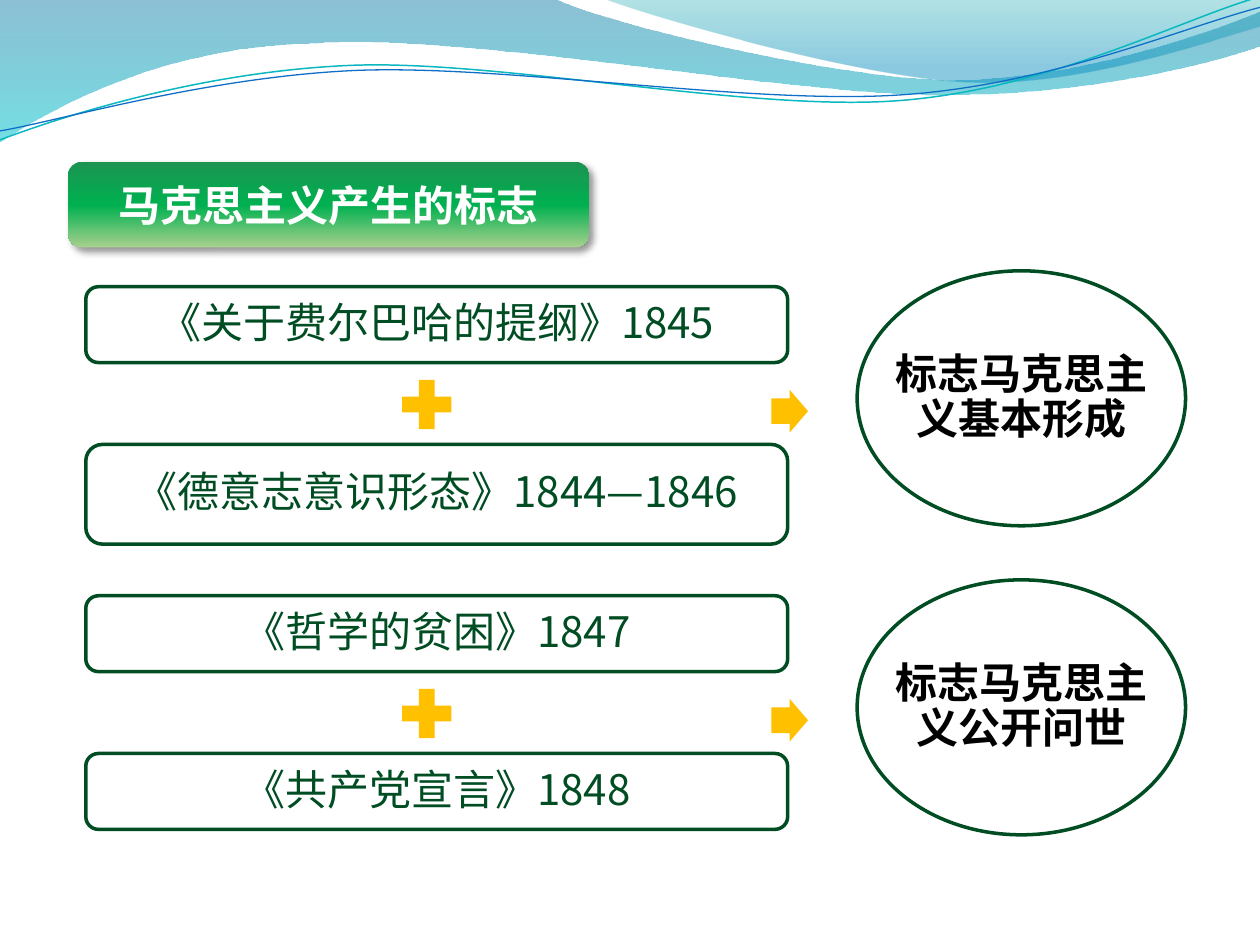
"""Build the slide on the works that mark the birth of Marxism."""
from lxml import etree
from pptx import Presentation
from pptx import util as u
from pptx.dml.color import RGBColor
from pptx.enum import shapes, text
from pptx.oxml.ns import qn

FONT = "Noto Sans CJK SC"
GREEN = RGBColor(0x01, 0x4D, 0x23)
GOLD = RGBColor(0xFF, 0xC0, 0x00)
WHITE = RGBColor(0xFF, 0xFF, 0xFF)
BLACK = RGBColor(0x00, 0x00, 0x00)
TEAL_LINE = RGBColor(0x0A, 0xB8, 0xBF)
BLUE_LINE = RGBColor(0x0F, 0x6F, 0xC6)
DEEP_BLUE = RGBColor(0x00, 0x74, 0xA1)
AQUA = RGBColor(0x00, 0xC6, 0xCF)
TEAL = RGBColor(0x00, 0xA1, 0xA9)
SKY = RGBColor(0x00, 0x8B, 0xBF)
PANEL_TOP = RGBColor(0x1B, 0x94, 0x51)
PANEL_MID = RGBColor(0x00, 0xB0, 0x50)
PANEL_END = RGBColor(0xA9, 0xD1, 0x8E)

WAVES = [
    ([[(0, 0)], [(11.18, -0.03)],
      [(12.09, 0.43), (16.87, 1.6), (19.25, 1.6)],
      [(21.67, 1.6), (24.33, 0.66), (25.4, 0.23)], [(25.43, 0.91)],
      [(24.97, 1.12), (22.1, 1.93), (18.95, 1.91)],
      [(15.8, 1.91), (9.7, 0.71), (6.53, 0.86)],
      [(3.28, 0.91), (1.17, 2.11), (-0.03, 2.87)], [(0, 0)]],
     [(0, DEEP_BLUE, 45), (100, AQUA, 55)]),
    ([[(12.17, -0.03)],
      [(12.93, 0.28), (17.32, 1.57), (19.53, 1.65)],
      [(21.74, 1.75), (24.41, 0.81), (25.4, 0.53)], [(25.4, 0)], [(12.17, -0.03)]],
     [(0, TEAL, 30), (80, SKY, 45)]),
]
STRANDS = [
    ([[(0, 2.82)], [(1.22, 2.36), (4.01, 1.45), (7.04, 1.32)],
      [(10.03, 1.19), (15.06, 2.26), (18.11, 2.03)],
      [(21.16, 1.8), (23.83, 0.38), (25.35, -0.05)]], TEAL_LINE, 0.85),
    ([[(0, 2.64)], [(1.19, 2.44), (4.17, 1.55), (7.19, 1.42)],
      [(10.24, 1.3), (15.16, 2.13), (18.21, 1.91)],
      [(21.23, 1.7), (23.9, 0.53), (25.4, 0.15)]], BLUE_LINE, 0.75),
]
GROUPS = [
    ("《关于费尔巴哈的提纲》1845", "《德意志意识形态》1844—1846", 2.01, "标志马克思主义基本形成"),
    ("《哲学的贫困》1847", "《共产党宣言》1848", 1.53, "标志马克思主义公开问世"),
]
GROUP_TOP, GROUP_STEP = 5.78, 6.23
UNITS = 1000


def style(sp, fill=None, line=None, width=2):
    """Set plain fill and outline and drop the theme shadow."""
    sp.shadow.inherit = False
    if fill is None:
        sp.fill.background()
    else:
        sp.fill.solid()
        sp.fill.fore_color.rgb = fill
    if line is None:
        sp.line.fill.background()
    else:
        sp.line.color.rgb = line
        sp.line.width = u.Pt(width)
    return sp


def add_curve(s, path, closed=True, **look):
    """Add a freeform whose three-point segments are cubic curves."""
    ends = [(x * UNITS, y * UNITS) for x, y in (seg[-1] for seg in path)]
    fb = s.shapes.build_freeform(*ends[0], scale=u.Cm(1) / UNITS)
    fb.add_line_segments(ends[1:], close=closed)
    sp = fb.convert_to_shape()
    left, top = (min(axis) for axis in zip(*ends))
    lines = list(sp._element.iter(qn("a:lnTo")))
    for line, seg in zip(lines, path[1:]):
        if len(seg) == 3:
            line.tag
            cubic = etree.Element(qn("a:cubicBezTo"))
            for x, y in seg:
                etree.SubElement(cubic, qn("a:pt"), x=str(round(x * UNITS - left)),
                                 y=str(round(y * UNITS - top)))
            line.getparent().replace(line, cubic)
    return style(sp, **look)


def ellipse_path(cx, cy, rx, ry):
    """Return an ellipse as four cubic segments from its left end."""
    turns = [(-1, 0), (0, -1), (1, 0), (0, 1), (-1, 0)]
    k = 0.55
    path = [[(cx - rx, cy)]]
    for (ax, ay), (bx, by) in zip(turns, turns[1:]):
        unit = [(ax + k * bx, ay + k * by), (bx + k * ax, by + k * ay), (bx, by)]
        path.append([(cx + rx * x, cy + ry * y) for x, y in unit])
    return path


def add_preset(s, kind, box, **look):
    """Add a preset shape in a box given in centimetres."""
    return style(s.shapes.add_shape(kind, *map(u.Cm, box)), **look)


def set_gradient(sp, stops):
    """Fill a shape with a gradient running from top to bottom."""
    sp.fill.background()
    sp_pr = sp._element.spPr
    grad = etree.Element(qn("a:gradFill"), rotWithShape="1")
    stop_list = etree.SubElement(grad, qn("a:gsLst"))
    for pos, color, alpha in stops:
        gs = etree.SubElement(stop_list, qn("a:gs"), pos=str(pos * 1000))
        clr = etree.SubElement(gs, qn("a:srgbClr"), val=str(color))
        etree.SubElement(clr, qn("a:alpha"), val=str(alpha * 1000))
    etree.SubElement(grad, qn("a:lin"), ang="5400000", scaled="0")
    sp_pr.replace(sp_pr.find(qn("a:noFill")), grad)


def set_shadow(sp):
    """Give a shape a soft shadow to the lower right."""
    effects = sp._element.spPr.find(qn("a:effectLst"))
    shadow = etree.SubElement(effects, qn("a:outerShdw"), blurRad=str(u.Pt(4)),
                              dist=str(u.Pt(3)), dir="2700000", algn="tl", rotWithShape="0")
    clr = etree.SubElement(shadow, qn("a:srgbClr"), val=str(BLACK))
    etree.SubElement(clr, qn("a:alpha"), val="40000")


def write(sp, words, color, bold=False, frame=None, para=None):
    """Write one centred paragraph into a shape."""
    tf = sp.text_frame
    p = tf.paragraphs[0]
    r = p.add_run()
    r.text = words
    formats = [
        (tf, {"word_wrap": True, "vertical_anchor": text.MSO_ANCHOR.MIDDLE, **(frame or {})}),
        (p, {"alignment": text.PP_ALIGN.CENTER, **(para or {})}),
        (r.font, {"size": u.Pt(24), "bold": bold, "name": FONT}),
        (r.font.color, {"rgb": color}),
    ]
    for obj, values in formats:
        for name, value in values.items():
            setattr(obj, name, value)
    etree.SubElement(r._r.get_or_add_rPr(), qn("a:ea"), typeface=FONT)


def add_waves(s):
    """Draw the wavy band along the top."""
    for path, stops in WAVES:
        set_gradient(add_curve(s, path), stops)
    for path, color, width in STRANDS:
        add_curve(s, path, closed=False, line=color, width=width)


def add_heading(s, words):
    """Place the heading in its green panel."""
    panel = add_preset(s, shapes.MSO_SHAPE.ROUNDED_RECTANGLE, (1.37, 3.26, 10.51, 1.73))
    set_gradient(panel, [(0, PANEL_TOP, 100), (51, PANEL_MID, 100), (100, PANEL_END, 100)])
    set_shadow(panel)
    write(panel, words, WHITE, bold=True)


def add_group(s, top, first, second, second_height, result):
    """Draw two works joined by a plus and the result they lead to."""
    ms = shapes.MSO_SHAPE
    para = {"line_spacing": 0.9, "space_after": u.Pt(8)}
    add_preset(s, ms.MATH_PLUS, (7.93, top + 1.7, 1.35, 1.35), fill=GOLD)
    arrow = add_preset(s, ms.RIGHT_ARROW, (15.55, top + 2.08, 0.74, 0.86), fill=GOLD)
    arrow.adjustments[0] = 0.6
    ring = add_curve(s, ellipse_path(20.59, top + 2.25, 3.31, 2.57), line=GREEN)
    margins = {f"margin_{side}": u.Cm(0.69) for side in ("left", "top", "right", "bottom")}
    write(ring, result, BLACK, True, margins, para)
    for words, y, height in ((first, top, 1.53), (second, top + 3.18, second_height)):
        sp = add_preset(s, ms.ROUNDED_RECTANGLE, (1.73, y, 14.15, height), line=GREEN)
        write(sp, words, GREEN, para=para)


def main():
    """Build and save the slide."""
    prs = Presentation()
    prs.slide_width, prs.slide_height = u.Cm(25.4), u.Cm(19.05)
    s = prs.slides.add_slide(prs.slide_layouts[6])
    add_waves(s)
    add_heading(s, "马克思主义产生的标志")
    for i, group in enumerate(GROUPS):
        add_group(s, GROUP_TOP + i * GROUP_STEP, *group)
    prs.save("out.pptx")


if __name__ == "__main__":
    main()
